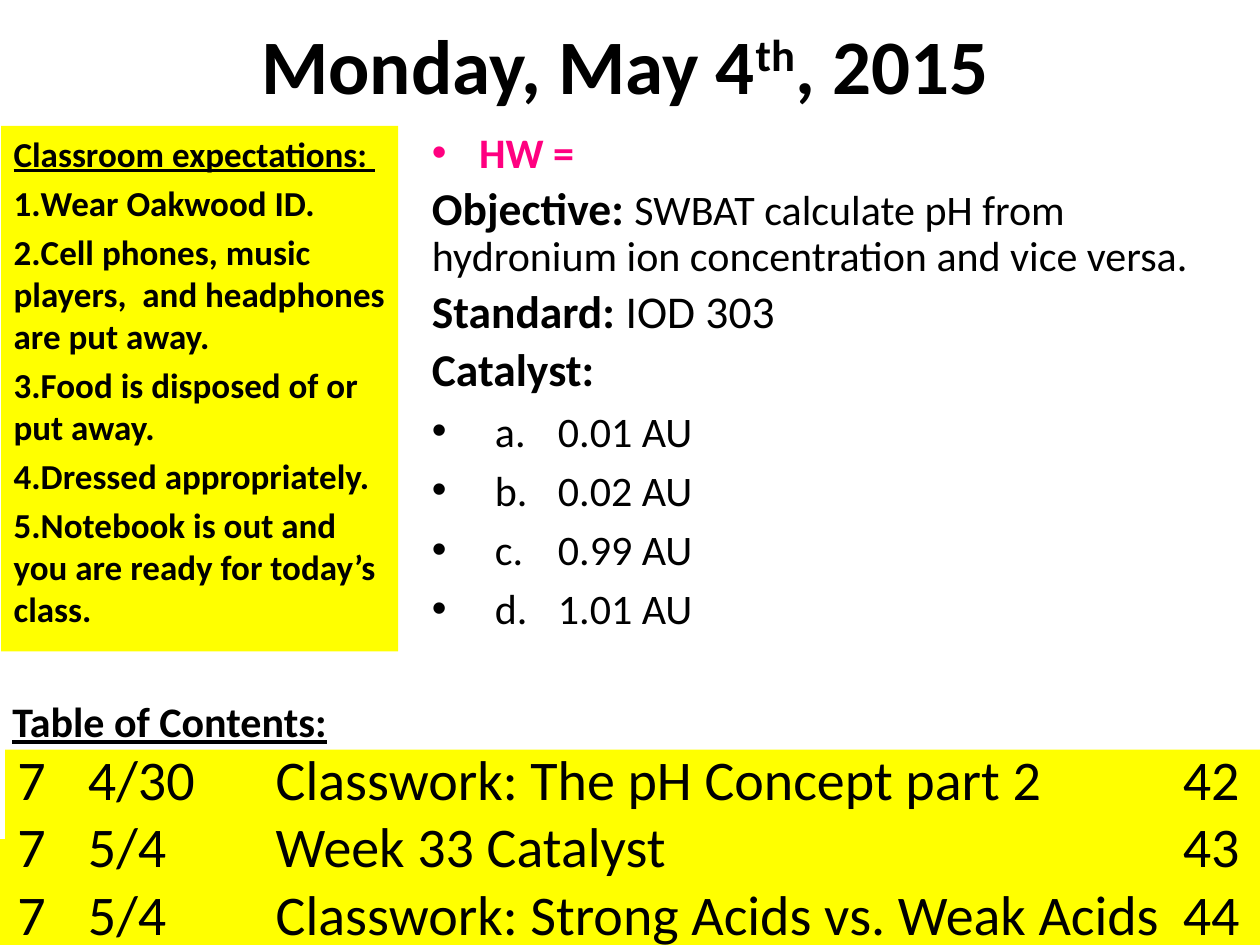
import pptx
import pptx.dml.color
import pptx.enum.shapes
import pptx.enum.text
import pptx.oxml.ns
import pptx.util
from lxml import etree

BLACK = pptx.dml.color.RGBColor(0, 0, 0)
PINK = pptx.dml.color.RGBColor(255, 0, 128)
YELLOW = pptx.dml.color.RGBColor(255, 255, 0)
FONT = "Calibri"
CELL = pptx.util.Inches(0.1)
COLUMNS, ROWS = 100, 75
ANCHOR = pptx.enum.text.MSO_ANCHOR

EXPECTATIONS = [
    "Wear Oakwood ID.",
    "Cell phones, music players,  and headphones are put away.",
    "Food is disposed of or put away.",
    "Dressed appropriately.",
    "Notebook is out and you are ready for today’s class.",
]
CATALYST = [("a.", "0.01 AU"), ("b.", "0.02 AU"), ("c.", "0.99 AU"), ("d.", "1.01 AU")]
CONTENTS = [
    ("7", "4/30", "Classwork: The pH Concept part 2", "42"),
    ("7", "5/4", "Week 33 Catalyst", "43"),
    ("7", "5/4", "Classwork: Strong Acids vs. Weak Acids", "44"),
]


def cells(count):
    """Return the length of a number of grid cells."""
    return round(count * CELL)


def add_element(parent, name, **attributes):
    """Append a DrawingML element with the given attributes."""
    element = etree.SubElement(parent, pptx.oxml.ns.qn("a:" + name))
    for key, value in attributes.items():
        element.set(key, str(value))
    return element


def add_run(paragraph, text, size, bold=False, underline=False, color=BLACK):
    """Add one formatted run to a paragraph."""
    run = paragraph.add_run()
    run.text = text
    run.font.name = FONT
    run.font.size = pptx.util.Pt(size)
    run.font.bold = bold
    run.font.underline = underline
    run.font.color.rgb = color
    return run


def add_paragraph(frame, before=0, spacing=1.0):
    """Return the next paragraph of a frame, using the first one while it is empty."""
    paragraph = frame.paragraphs[0] if not frame.paragraphs[0].runs else frame.add_paragraph()
    paragraph.alignment = pptx.enum.text.PP_ALIGN.LEFT
    paragraph.space_before = pptx.util.Pt(before)
    paragraph.line_spacing = spacing
    return paragraph


def add_bullet(paragraph, hang):
    """Give a paragraph a round bullet and a hanging indent in cells."""
    properties = paragraph._p.get_or_add_pPr()
    properties.set("marL", str(cells(hang)))
    properties.set("indent", str(-cells(hang)))
    add_element(properties, "buFont", typeface="Arial")
    add_element(properties, "buChar", char="•")


def add_tabs(paragraph, stops):
    """Set tab stops from pairs of position in cells and alignment."""
    tabs = add_element(paragraph._p.get_or_add_pPr(), "tabLst")
    for position, alignment in stops:
        add_element(tabs, "tab", pos=cells(position), algn=alignment)


def add_text_area(slide, box):
    """Add a wrapping text box and return its frame."""
    frame = slide.shapes.add_textbox(*map(cells, box)).text_frame
    frame.word_wrap = True
    return frame


def add_panel(slide, box, anchor=ANCHOR.TOP):
    """Add a plain yellow rectangle and return its text frame."""
    shape = slide.shapes.add_shape(pptx.enum.shapes.MSO_SHAPE.RECTANGLE, *map(cells, box))
    shape.shadow.inherit = False
    shape.fill.solid()
    shape.fill.fore_color.rgb = YELLOW
    shape.line.fill.background()
    shape.text_frame.word_wrap = True
    shape.text_frame.vertical_anchor = anchor
    return shape.text_frame


def fill_title(slide, box):
    """Place the date in the title placeholder."""
    title = slide.shapes.title
    title.left, title.top, title.width, title.height = map(cells, box)
    title.text_frame.vertical_anchor = ANCHOR.BOTTOM
    paragraph = title.text_frame.paragraphs[0]
    paragraph.alignment = pptx.enum.text.PP_ALIGN.CENTER
    add_run(paragraph, "Monday, May 4", 44, bold=True)
    ordinal = add_run(paragraph, "th", 44, bold=True)
    ordinal._r.get_or_add_rPr().set("baseline", "30000")
    add_run(paragraph, ", 2015", 44, bold=True)


def add_lesson(slide, box):
    """Write homework, objective, standard and the catalyst list."""
    frame = add_text_area(slide, box)
    homework = add_paragraph(frame, 5, 0.9)
    add_bullet(homework, 3.75)
    add_run(homework, "HW =", 24, bold=True, color=PINK)
    objective = "SWBAT calculate pH from hydronium ion concentration and vice versa."
    for label, text, size in [("Objective: ", objective, 24),
                              ("Standard: ", "IOD 303", 26),
                              ("Catalyst:", "", 26)]:
        paragraph = add_paragraph(frame, 5, 0.9)
        add_run(paragraph, label, 26, bold=True)
        if text:
            add_run(paragraph, text, size)
    for letter, value in CATALYST:
        paragraph = add_paragraph(frame, 5)
        add_bullet(paragraph, 5)
        add_tabs(paragraph, [(10, "l")])
        add_run(paragraph, f"{letter}\t{value}", 24)


def add_expectations(slide, box):
    """Write the numbered classroom rules on a yellow panel."""
    frame = add_panel(slide, box)
    add_run(add_paragraph(frame, 4), "Classroom expectations: ", 20, bold=True, underline=True)
    for rule in EXPECTATIONS:
        paragraph = add_paragraph(frame, 4)
        add_element(paragraph._p.get_or_add_pPr(), "buAutoNum", type="arabicPeriod")
        add_run(paragraph, rule, 20, bold=True)


def add_contents(slide, box):
    """Write the table of contents heading above its yellow rows."""
    left, top, width, height = box
    add_panel(slide, (left, top + 11.9, width, height - 11.9))
    heading = add_text_area(slide, (left, top, 31.4, 5))
    add_run(add_paragraph(heading), "Table of Contents:", 24, bold=True, underline=True)
    frame = add_panel(slide, (left + 0.4, top + 4.8, width - 0.4, 15.2), ANCHOR.MIDDLE)
    for entry in CONTENTS:
        paragraph = add_paragraph(frame)
        add_tabs(paragraph, [(5.6, "l"), (20.5, "l"), (97, "r")])
        add_run(paragraph, "\t".join(entry), 32)


def main():
    """Build and save the slide."""
    presentation = pptx.Presentation()
    presentation.slide_width = cells(COLUMNS)
    presentation.slide_height = cells(ROWS)
    slide = presentation.slides.add_slide(presentation.slide_layouts[5])
    fill_title(slide, (5, 0, 89.2, 9.2))
    add_lesson(slide, (33.3, 10, 66.7, 50.3))
    add_expectations(slide, (0.1, 10, 31.5, 41.7))
    add_contents(slide, (0, 54.7, COLUMNS, ROWS - 54.7))
    presentation.save("out.pptx")


if __name__ == "__main__":
    main()
